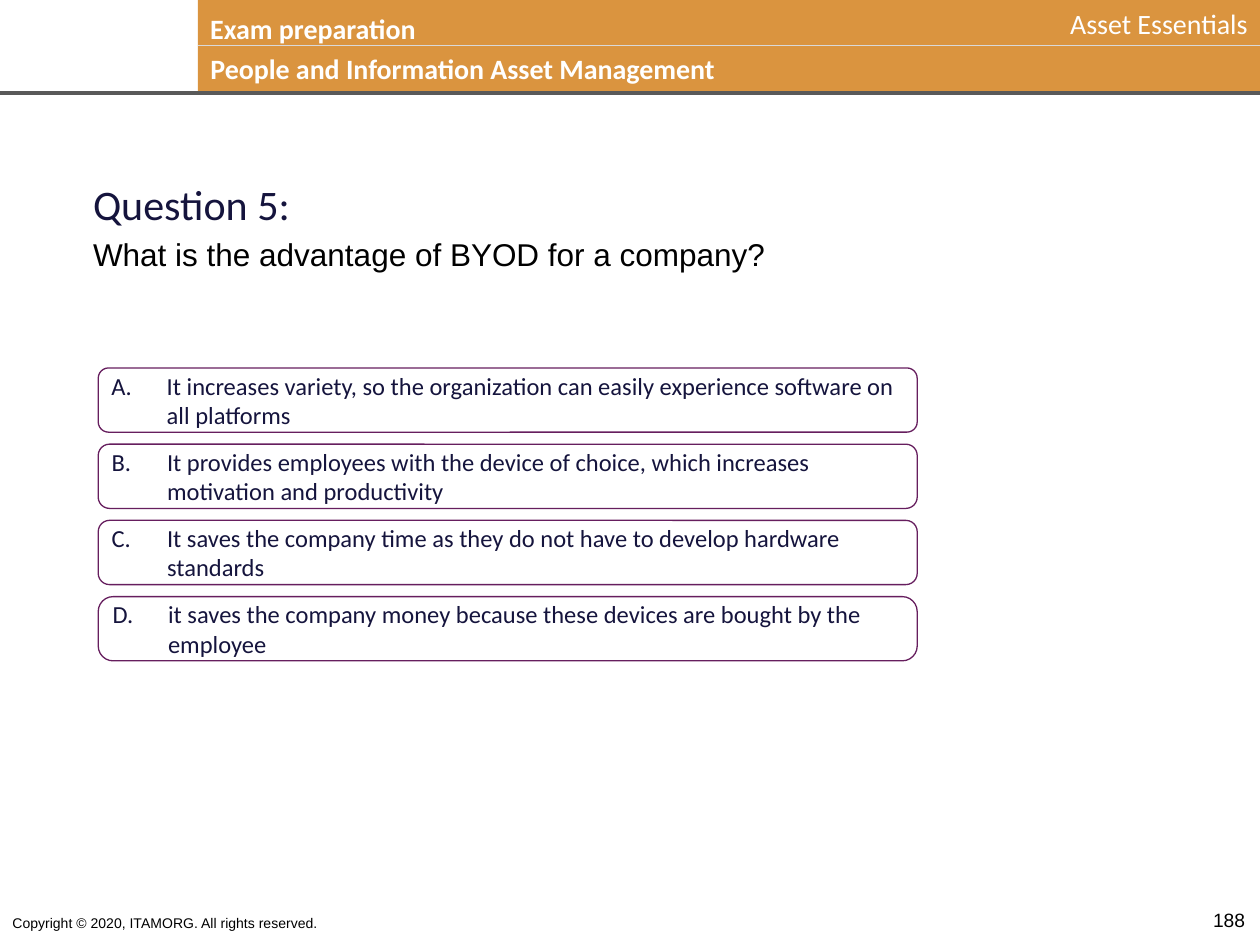
from lxml import etree
from pptx import Presentation
from pptx import util as u
from pptx.dml.color import RGBColor
from pptx.enum import shapes, text
from pptx.oxml.ns import qn

WIDE, HIGH = 10, 7.5
EDGE = 1.57  # left edge of the header band
LEFT, TOP, PITCH = 0.78, 2.92, 0.605  # answer column
INDENT = 0.44
NAVY, PLUM, WHITE, BLACK = "15143D", "661E5E", "FFFFFF", "000000"

ANSWERS = [
    ("A", 0.16, "It increases variety, so the organization can easily "
                "experience software on all platforms"),
    ("B", 0.176, "It provides employees with the device of choice, which "
                 "increases motivation and productivity"),
    ("C", 0.176, "It saves the company time as they do not have to develop "
                 "hardware standards"),
    ("D", 0.232, "it saves the company money because these devices are "
                 "bought by the employee"),
]


def color(code):
    return RGBColor.from_string(code)


def inches(*sizes):
    return [u.Inches(size) for size in sizes]


def style(para, size, code, font="Calibri", bold=False,
          align=text.PP_ALIGN.LEFT):
    para.alignment = align
    for run in para.runs:
        run.font.size = u.Pt(size)
        run.font.name = font
        run.font.bold = bold
        run.font.color.rgb = color(code)


def add_text(slide, box, words, size, code, **looks):
    frame = slide.shapes.add_textbox(*inches(*box)).text_frame
    frame.word_wrap = True
    frame.text = words
    style(frame.paragraphs[0], size, code, **looks)
    return frame


def add_line(slide, left, y, right, code, width):
    line = slide.shapes.add_connector(
        shapes.MSO_CONNECTOR.STRAIGHT, *inches(left, y, right, y))
    line.line.color.rgb = color(code)
    line.line.width = u.Pt(width)
    etree.SubElement(line._element.spPr, qn("a:effectLst"))


def add_band(slide):
    band = slide.shapes.add_shape(
        shapes.MSO_SHAPE.RECTANGLE, *inches(EDGE, -0.01, 8.44, 0.74))
    band.shadow.inherit = False
    band.fill.solid()
    band.fill.fore_color.rgb = color("DA943F")
    band.line.fill.background()
    add_line(slide, 0, 0.74, WIDE, "595959", 2.25)
    add_line(slide, EDGE, 0.36, WIDE, "D9D9D9", 0.75)


def set_title(slide, words):
    """Place the title in the lower half of the band, in front of it."""
    title = slide.shapes.title
    title.left, title.top, title.width, title.height = inches(
        EDGE, 0.36, 6.9, 0.29)
    frame = title.text_frame
    frame.text = words
    frame.word_wrap = True
    frame.auto_size = text.MSO_AUTO_SIZE.NONE
    frame.vertical_anchor = text.MSO_ANCHOR.TOP
    style(frame.paragraphs[0], 16, WHITE, bold=True)
    slide.shapes._spTree.append(title._element)


def add_answer(slide, row, letter, curve, words):
    box = slide.shapes.add_shape(
        shapes.MSO_SHAPE.ROUNDED_RECTANGLE,
        *inches(LEFT, TOP + row * PITCH, 6.5, 0.51))
    box.adjustments[0] = curve
    box.shadow.inherit = False
    box.fill.background()
    box.line.color.rgb = color(PLUM)
    box.line.width = u.Pt(0.75)
    frame = box.text_frame
    frame.word_wrap = True
    frame.vertical_anchor = text.MSO_ANCHOR.MIDDLE
    frame.margin_left = frame.margin_right = u.Inches(0.08)
    frame.margin_top = frame.margin_bottom = u.Inches(0.04)
    para = frame.paragraphs[0]
    para.text = f"{letter}.\t{words}"
    props = para._p.get_or_add_pPr()
    props.set("marL", str(u.Inches(INDENT)))
    props.set("indent", str(-u.Inches(INDENT)))
    style(para, 14, NAVY)


def add_question(slide, head, words):
    frame = add_text(slide, (0.64, 1.37, 7.56, 0.85), head, 24, NAVY)
    para = frame.add_paragraph()
    para.text = words
    para.space_before = u.Pt(3.4)
    style(para, 18, BLACK, font="Arial")


def main():
    deck = Presentation()
    deck.slide_width, deck.slide_height = inches(WIDE, HIGH)
    slide = deck.slides.add_slide(deck.slide_layouts[5])

    add_text(slide, (0, 7.21, 4.75, 0.24),
             "Copyright © 2020, ITAMORG. All rights reserved.",
             8, BLACK, font="Arial")
    add_text(slide, (9.46, 7.16, 0.59, 0.34), "188", 11, BLACK,
             font="Arial", align=text.PP_ALIGN.CENTER)
    add_band(slide)
    add_text(slide, (7.61, 0, 2.39, 0.37), "Asset Essentials", 16, WHITE,
             align=text.PP_ALIGN.RIGHT)
    add_text(slide, (EDGE, 0.04, 6.9, 0.29), "Exam preparation", 16, WHITE,
             bold=True)
    set_title(slide, "People and Information Asset Management")
    add_question(slide, "Question 5:",
                 "What is the advantage of BYOD for a company?")
    for row, answer in enumerate(ANSWERS):
        add_answer(slide, row, *answer)

    deck.save("out.pptx")


if __name__ == "__main__":
    main()
